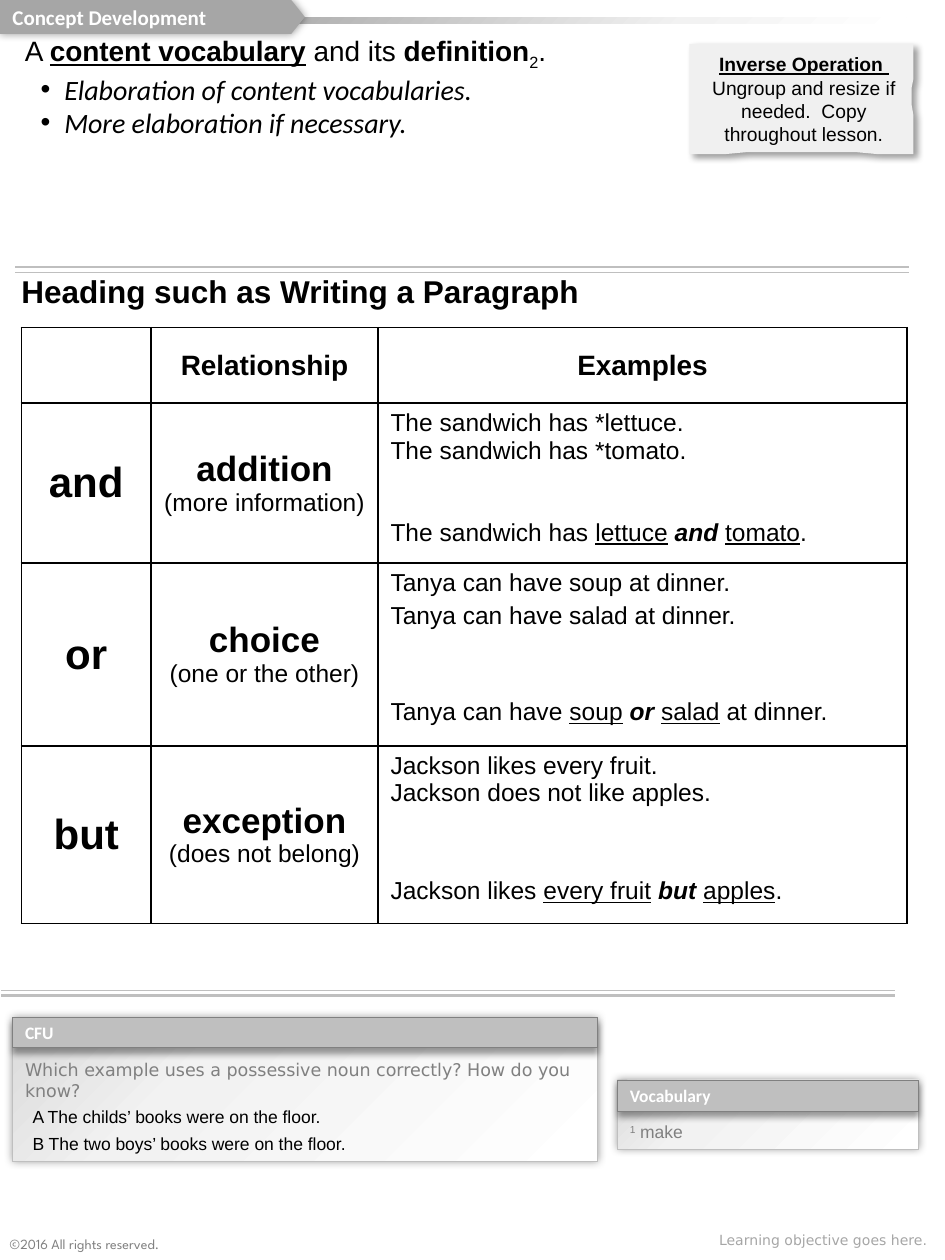
from dataclasses import dataclass
from typing import Optional

import pptx
import pptx.dml.color
import pptx.enum.shapes
import pptx.enum.text
import pptx.oxml
import pptx.oxml.ns
import pptx.util
from lxml import etree

Pt = pptx.util.Pt
RGBColor = pptx.dml.color.RGBColor
MSO_SHAPE = pptx.enum.shapes.MSO_SHAPE
ANCHOR = pptx.enum.text.MSO_ANCHOR
ALIGN = pptx.enum.text.PP_ALIGN
qn = pptx.oxml.ns.qn

BLACK = RGBColor(0x00, 0x00, 0x00)
WHITE = RGBColor(0xFF, 0xFF, 0xFF)
GRAY = RGBColor(0x80, 0x80, 0x80)
COPYRIGHT_GRAY = RGBColor(0x7F, 0x7F, 0x7F)
TAG_GRAY = RGBColor(0xA6, 0xA6, 0xA6)
RULE_GRAY = RGBColor(0xBF, 0xBF, 0xBF)
LIGHT_GRAY = RGBColor(0xD9, 0xD9, 0xD9)
NOTE_GRAY = RGBColor(0xF0, 0xF0, 0xF0)
PALE_GRAY = RGBColor(0xF2, 0xF2, 0xF2)

CARD_STOPS = ((0, LIGHT_GRAY), (32, PALE_GRAY), (100, WHITE))
BAR_STOPS = ((0, GRAY), (75, PALE_GRAY), (100, WHITE))
INSETS = (7.2, 3.6, 7.2, 3.6)


@dataclass
class Run:
    text: str
    size: float = 14
    font: str = "Arial"
    color: RGBColor = BLACK
    bold: bool = False
    italic: bool = False
    underline: bool = False
    baseline: int = 0


@dataclass
class Paragraph:
    runs: list[Run]
    align: ALIGN = ALIGN.LEFT
    before: float = 0
    left: float = 0
    hanging: float = 0
    bullet: str = ""


@dataclass
class Box:
    left: float
    top: float
    width: float
    height: float

    def lengths(self) -> tuple:
        return Pt(self.left), Pt(self.top), Pt(self.width), Pt(self.height)


@dataclass
class Shadow:
    blur: float
    distance: float = 0
    angle: int = 0


@dataclass
class Card:
    box: Box
    header_height: float
    heading: str
    paragraphs: list[Paragraph]


@dataclass
class Conjunction:
    word: str
    relationship: str
    meaning: str
    sentences: tuple[str, str]
    combined: tuple[str, str, str, str]
    line_gap: float
    result_gap: float


def write(frame, paragraphs: list[Paragraph]) -> None:
    for index, item in enumerate(paragraphs):
        paragraph = frame.paragraphs[0] if index == 0 else frame.add_paragraph()
        paragraph.alignment = item.align
        paragraph.space_before = Pt(item.before)
        properties = paragraph._p.get_or_add_pPr()
        if item.left:
            properties.set("marL", str(Pt(item.left)))
            properties.set("indent", str(-Pt(item.hanging)))
        if item.bullet:
            etree.SubElement(properties, qn("a:buFont"), typeface="Arial")
            etree.SubElement(properties, qn("a:buChar"), char=item.bullet)
        for part in item.runs:
            run = paragraph.add_run()
            run.text = part.text
            run.font.size = Pt(part.size)
            run.font.name = part.font
            run.font.color.rgb = part.color
            run.font.bold, run.font.italic = part.bold, part.italic
            run.font.underline = part.underline
            if part.baseline:
                run._r.get_or_add_rPr().set("baseline", str(part.baseline * 1000))


def fill_frame(shape, paragraphs: list[Paragraph], anchor=ANCHOR.TOP, insets=INSETS, wrap=True) -> None:
    frame = shape.text_frame
    frame.auto_size = pptx.enum.text.MSO_AUTO_SIZE.NONE
    frame.word_wrap = wrap
    frame.vertical_anchor = anchor
    frame.margin_left, frame.margin_top, frame.margin_right, frame.margin_bottom = map(Pt, insets)
    write(frame, paragraphs)


def add_text(slide, box: Box, paragraphs: list[Paragraph], anchor=ANCHOR.TOP, wrap=True) -> None:
    fill_frame(slide.shapes.add_textbox(*box.lengths()), paragraphs, anchor, wrap=wrap)


def style_shape(shape, fill, line: Optional[RGBColor] = None, shadow: Optional[Shadow] = None) -> None:
    """Fill with one colour or with gradient stops, then set outline and shadow."""
    if isinstance(fill, RGBColor):
        shape.fill.solid()
        shape.fill.fore_color.rgb = fill
    else:
        shape.fill.gradient()
        shape.fill.gradient_angle = 315
        stops = shape._element.spPr.find(qn("a:gradFill")).find(qn("a:gsLst"))
        for stop in list(stops):
            stops.remove(stop)
        for position, color in fill:
            stop = etree.SubElement(stops, qn("a:gs"), pos=str(position * 1000))
            etree.SubElement(stop, qn("a:srgbClr"), val=str(color))
    if line is None:
        shape.line.fill.background()
    else:
        shape.line.color.rgb = line
        shape.line.width = Pt(0.25)
    shape.shadow.inherit = False
    if shadow:
        effects = shape._element.spPr.find(qn("a:effectLst"))
        outer = etree.SubElement(
            effects, qn("a:outerShdw"), blurRad=str(Pt(shadow.blur)), dist=str(Pt(shadow.distance)),
            dir=str(shadow.angle * 60000), algn="ctr", rotWithShape="0")
        color = etree.SubElement(outer, qn("a:srgbClr"), val=str(BLACK))
        etree.SubElement(color, qn("a:alpha"), val="40000")


def label(text: str, size: float) -> list[Paragraph]:
    return [Paragraph([Run(text, size, "Calibri", WHITE, bold=True)])]


def add_card(slide, card: Card) -> None:
    body = slide.shapes.add_shape(MSO_SHAPE.RECTANGLE, *card.box.lengths())
    style_shape(body, CARD_STOPS, RULE_GRAY, Shadow(5))
    fill_frame(body, card.paragraphs, insets=(7.2, 23.8, 3.6, 3.6))
    box = Box(card.box.left, card.box.top, card.box.width, card.header_height)
    header = slide.shapes.add_shape(MSO_SHAPE.RECTANGLE, *box.lengths())
    style_shape(header, RULE_GRAY, GRAY, Shadow(4, 3, 90))
    fill_frame(header, label(card.heading, 10), ANCHOR.MIDDLE)


def add_rule(slide, left: float, top: float, width: float) -> None:
    rule = slide.shapes.add_connector(
        pptx.enum.shapes.MSO_CONNECTOR.STRAIGHT, Pt(left), Pt(top), Pt(left + 511), Pt(top))
    rule.line.color.rgb = RULE_GRAY
    rule.line.width = Pt(width)
    etree.SubElement(rule._element.spPr, qn("a:effectLst"))


def curve(start, first, second, end, steps: int = 12) -> list:
    """Points along a cubic curve, without its start."""
    points = []
    for step in range(1, steps + 1):
        t = step / steps
        weights = ((1 - t) ** 3, 3 * t * (1 - t) ** 2, 3 * t * t * (1 - t), t ** 3)
        points.append(tuple(sum(w * p[axis] for w, p in zip(weights, (start, first, second, end)))
                            for axis in (0, 1)))
    return points


def add_note(slide) -> None:
    top_left, top_right = (393.8, 25.2), (522, 25.2)
    bottom_left, bottom_right = (393.8, 87.8), (522, 87.8)
    points = [top_right]
    points += curve(top_right, (521.3, 46), (521.3, 64), bottom_right)
    points += curve(bottom_right, (479.5, 87.1), (436.3, 87.1), bottom_left)
    points += curve(bottom_left, (394.5, 67), (394.5, 46), top_left)
    builder = slide.shapes.build_freeform(*top_left, scale=Pt(1))
    builder.add_line_segments(points, close=True)
    style_shape(builder.convert_to_shape(), NOTE_GRAY, shadow=Shadow(4, 3, 45))
    add_text(slide, Box(398.2, 26.6, 122.4, 60.5), [
        Paragraph([Run("Inverse Operation ", 11, bold=True, underline=True)], ALIGN.CENTER),
        Paragraph([Run("Ungroup and resize if needed.  Copy throughout lesson.", 11)], ALIGN.CENTER)])


def centered(text: str, size: float, bold: bool = True) -> Paragraph:
    return Paragraph([Run(text, size, bold=bold)], ALIGN.CENTER)


def example_paragraphs(item: Conjunction) -> list[Paragraph]:
    opening, first, second, ending = item.combined
    result = [Run(opening), Run(first, underline=True), Run(" "),
              Run(item.word + " ", bold=True, italic=True), Run(second, underline=True), Run(ending)]
    return [Paragraph([Run(item.sentences[0])]),
            Paragraph([Run(item.sentences[1])], before=item.line_gap),
            Paragraph(result, before=item.result_gap)]


def add_conjunction_table(slide, items: list[Conjunction]) -> None:
    widths, heights = (74.2, 129.6, 302.4), (43.2, 91.4, 104.4, 101.5)
    box = Box(12.2, 187.2, sum(widths), sum(heights))
    table = slide.shapes.add_table(len(heights), len(widths), *box.lengths()).table
    table.first_row = table.horz_banding = False
    for column, width in zip(table.columns, widths):
        column.width = Pt(width)
    rows = [[[], [centered("Relationship", 16)], [centered("Examples", 16)]]]
    rows += [[[centered(item.word, 24)],
              [centered(item.relationship, 20), centered(item.meaning, 14, False)],
              example_paragraphs(item)] for item in items]
    for row_index, row in enumerate(rows):
        table.rows[row_index].height = Pt(heights[row_index])
        for column_index, paragraphs in enumerate(row):
            cell = table.cell(row_index, column_index)
            is_example = row_index > 0 and column_index == 2
            cell.vertical_anchor = ANCHOR.TOP if is_example else ANCHOR.MIDDLE
            write(cell.text_frame, paragraphs)
            properties = cell._tc.get_or_add_tcPr()
            for side in ("a:lnL", "a:lnR", "a:lnT", "a:lnB"):
                border = etree.SubElement(properties, qn(side), w=str(Pt(1)))
                solid = etree.SubElement(border, qn("a:solidFill"))
                etree.SubElement(solid, qn("a:srgbClr"), val=str(BLACK))
            cell.fill.background()


CONJUNCTIONS = [
    Conjunction("and", "addition", "(more information)",
                ("The sandwich has *lettuce.", "The sandwich has *tomato."),
                ("The sandwich has ", "lettuce", "tomato", "."), 0, 31),
    Conjunction("or", "choice", "(one or the other)",
                ("Tanya can have soup at dinner.", "Tanya can have salad at dinner."),
                ("Tanya can have ", "soup", "salad", " at dinner."), 2.8, 39.5),
    Conjunction("but", "exception", "(does not belong)",
                ("Jackson likes every fruit.", "Jackson does not like apples."),
                ("Jackson likes ", "every fruit", "apples", "."), 0, 40),
]
CHOICES = ("A The childs’ books were on the floor.", "B The two boys’ books were on the floor.")
CARDS = [
    Card(Box(7.2, 581.4, 334, 82), 17.3, "CFU",
         [Paragraph([Run("Which example uses a possessive noun correctly? How do you know?",
                         10, "DejaVu Sans", GRAY)])]
         + [Paragraph([Run(choice, 10)], before=3, left=18, hanging=13.7) for choice in CHOICES]),
    Card(Box(352.8, 617, 172, 39.6), 18, "Vocabulary",
         [Paragraph([Run("1", 10, color=GRAY, baseline=30), Run(" make", 10, color=GRAY)])]),
]
ELABORATIONS = ("Elaboration of content vocabularies.", "More elaboration if necessary.")
DEFINITION = [Paragraph([
    Run("A ", 16), Run("content vocabulary", 16, bold=True, underline=True), Run(" and its ", 16),
    Run("definition", 16, bold=True), Run("2", 16, baseline=-25), Run(".", 16)])]
DEFINITION += [Paragraph([Run(text, 16, "Calibri", italic=True)], left=22.5, hanging=13.5, bullet="•")
               for text in ELABORATIONS]


def main() -> None:
    presentation = pptx.Presentation()
    presentation.slide_width, presentation.slide_height = Pt(540), Pt(720)
    slide = presentation.slides.add_slide(presentation.slide_layouts[5])
    title = slide.shapes.title
    title.left, title.top, title.width, title.height = Box(5, 151.9, 347, 28.8).lengths()
    fill_frame(title, [Paragraph([Run("Heading such as Writing a Paragraph", 18, bold=True)])], wrap=False)

    add_text(slide, Box(-1.5, 702.7, 117.4, 17.3), [Paragraph([
        Run("©2016 All rights reserved.", 8, "League Spartan", COPYRIGHT_GRAY)])], wrap=False)
    bar = slide.shapes.add_shape(MSO_SHAPE.RECTANGLE, *Box(7.2, 10, 511, 3.6).lengths())
    style_shape(bar, BAR_STOPS)
    for left, top, width in ((0.7, 568.8, 1.5), (0.7, 565.9, 0.25), (8.6, 152.6, 1.5), (8.6, 155.5, 0.25)):
        add_rule(slide, left, top, width)
    for card in CARDS:
        add_card(slide, card)
    tag = slide.shapes.add_shape(MSO_SHAPE.PENTAGON, *Box(0, 0, 174.2, 19.4).lengths())
    tag.adjustments[0] = 0.4
    style_shape(tag, TAG_GRAY, shadow=Shadow(5))
    fill_frame(tag, label("Concept Development", 12), ANCHOR.MIDDLE, (7.2, 3.6, 1.4, 3.6))
    add_conjunction_table(slide, CONJUNCTIONS)
    add_text(slide, Box(7.2, 15.8, 532, 65.5), DEFINITION)
    add_note(slide)
    add_text(slide, Box(234.7, 699.8, 302.4, 17.3), [Paragraph([
        Run("Learning objective goes here.", 8, "DejaVu Sans", TAG_GRAY)], ALIGN.RIGHT)], ANCHOR.BOTTOM)
    presentation.save("out.pptx")


if __name__ == "__main__":
    main()
